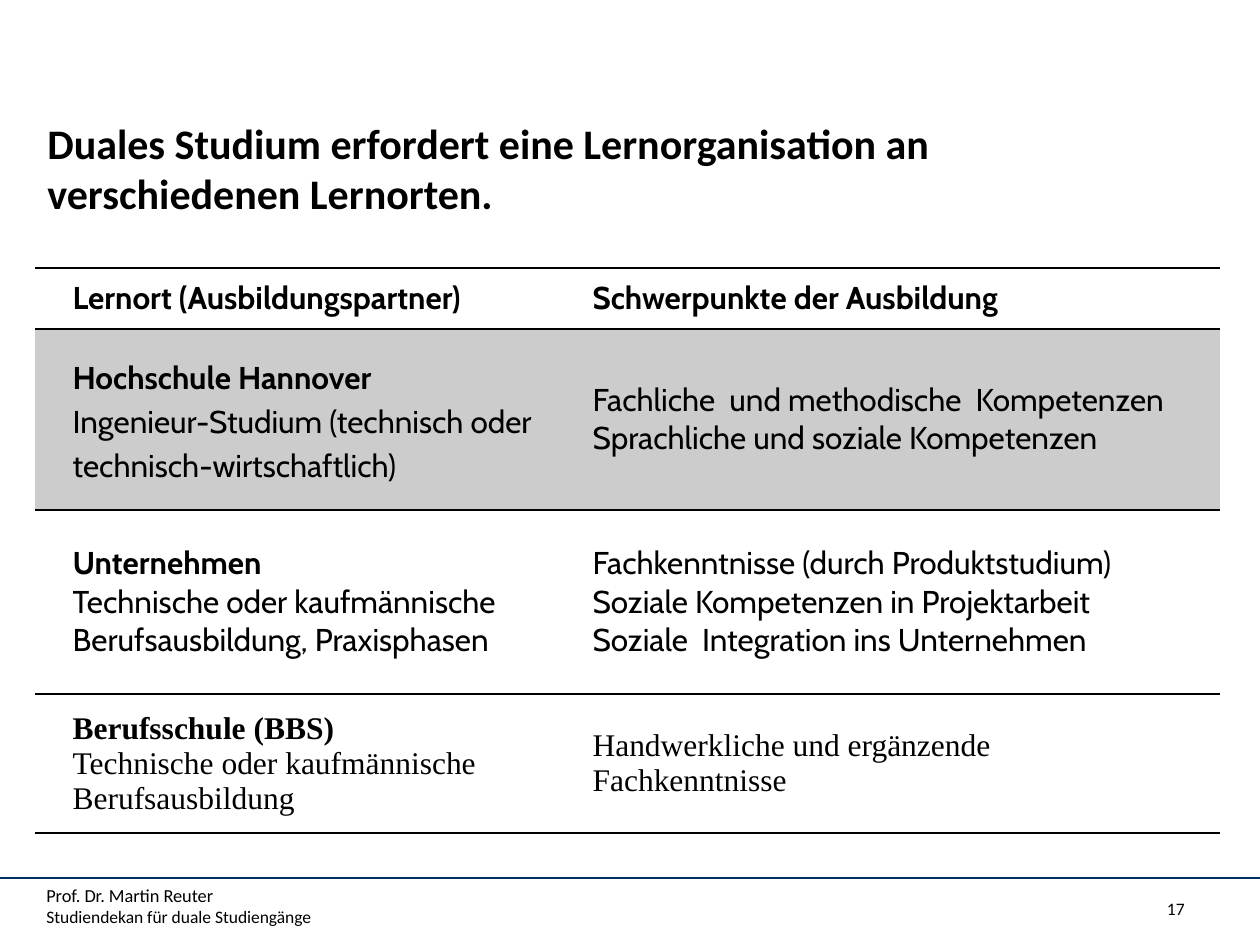
from lxml.etree import SubElement
from pptx import Presentation
from pptx.dml.color import RGBColor
from pptx.enum.shapes import MSO_CONNECTOR
from pptx.enum.text import MSO_ANCHOR, PP_ALIGN
from pptx.oxml import parse_xml
from pptx.oxml.ns import nsdecls, qn
from pptx.util import Pt

BLACK = RGBColor(0x00, 0x00, 0x00)
GREY = RGBColor(0xCC, 0xCC, 0xCC)
NAVY = RGBColor(0x00, 0x30, 0x5D)

# A cell is a list of paragraphs, a paragraph a list of (line, bold).
HEADER = [
    [[("Lernort (Ausbildungspartner)", True)]],
    [[("Schwerpunkte der Ausbildung", True)]],
]
UNIVERSITY = [
    [[("Hochschule Hannover", True)],
     [("Ingenieur-Studium (technisch oder technisch-wirtschaftlich)", False)]],
    [[("Fachliche  und methodische  Kompetenzen", False)],
     [("Sprachliche und soziale Kompetenzen", False)]],
]
COMPANY = [
    [[("Unternehmen", True),
      ("Technische oder kaufmännische Berufsausbildung, Praxisphasen", False)]],
    [[("Fachkenntnisse (durch Produktstudium)", False)],
     [("Soziale Kompetenzen in Projektarbeit", False)],
     [("Soziale  Integration ins Unternehmen", False)]],
]
SCHOOL = [
    [[("Berufsschule (BBS)", True)],
     [("Technische oder kaufmännische Berufsausbildung", False)]],
    [[("Handwerkliche und ergänzende", False), ("Fachkenntnisse", False)]],
]
# Each table: font and rows of (height, fill, cells)
TABLES = [
    ("Cabin", [(61, None, HEADER), (181, GREY, UNIVERSITY)]),
    ("Cabin", [(184, None, COMPANY)]),
    ("Times New Roman", [(139, None, SCHOOL)]),
]
TABLE_LEFT, TABLE_TOP = 35, 268
COLUMNS = [520, 665]
CELL_INDENT = 25

TEXTS = [
    dict(box=(35, 111, 1187, 115), align=PP_ALIGN.LEFT, bold=True,
         lines=[("Duales Studium erfordert eine Lernorganisation an", 24),
                ("verschiedenen Lernorten.", 24)]),
    dict(box=(34, 878, 843, 49), align=PP_ALIGN.LEFT, bold=False,
         lines=[("Prof. Dr. Martin Reuter", 10.5),
                ("Studiendekan für duale Studiengänge", 10)]),
    dict(box=(966, 892, 231, 32), align=PP_ALIGN.RIGHT, bold=False,
         lines=[("17", 10)]),
]


def px(length):
    return round(length * 914400 / 126)


def add_lines(paragraph, lines, font_name):
    """Write (text, size, bold) lines with line breaks between them."""
    for number, (text, size, bold) in enumerate(lines):
        if number:
            paragraph.add_line_break()
        run = paragraph.add_run()
        run.text = text
        run.font.color.rgb = BLACK
        for key, value in dict(name=font_name, size=Pt(size), bold=bold).items():
            setattr(run.font, key, value)


def set_borders(cell):
    """Rule the cell above and below, and leave its sides open."""
    for position, side in enumerate(("lnL", "lnR", "lnT", "lnB")):
        border = parse_xml(f'<a:{side} {nsdecls("a")} w="{Pt(1)}"/>')
        if side in ("lnT", "lnB"):
            solid = SubElement(border, qn("a:solidFill"))
            SubElement(solid, qn("a:srgbClr"), val=str(BLACK))
        else:
            SubElement(border, qn("a:noFill"))
        cell._tc.get_or_add_tcPr().insert(position, border)


def fill_cell(cell, paragraphs, fill, font_name):
    cell.vertical_anchor = MSO_ANCHOR.MIDDLE
    if fill is None:
        cell.fill.background()
    else:
        cell.fill.solid()
        cell.fill.fore_color.rgb = fill
    set_borders(cell)
    frame = cell.text_frame
    for number, lines in enumerate(paragraphs):
        paragraph = frame.add_paragraph() if number else frame.paragraphs[0]
        paragraph._p.get_or_add_pPr().set("marL", str(px(CELL_INDENT)))
        if paragraphs is UNIVERSITY[0]:
            paragraph.line_spacing = Pt(25)
        add_lines(paragraph, [(text, 18, bold) for text, bold in lines], font_name)


def add_learning_table(slide, top, font_name, rows):
    height = sum(row[0] for row in rows)
    table = slide.shapes.add_table(
        len(rows), len(COLUMNS), px(TABLE_LEFT), px(top),
        px(sum(COLUMNS)), px(height)).table
    table.first_row = table.horz_banding = False
    for column, width in zip(table.columns, COLUMNS):
        column.width = px(width)
    for row, (row_height, fill, cells) in zip(table.rows, rows):
        row.height = px(row_height)
        for cell, paragraphs in zip(row.cells, cells):
            fill_cell(cell, paragraphs, fill, font_name)
    return top + height


def add_text(slide, box, align, bold, lines):
    frame = slide.shapes.add_textbox(*map(px, box)).text_frame
    frame.word_wrap = True
    paragraph = frame.paragraphs[0]
    paragraph.alignment = align
    add_lines(paragraph, [(text, size, bold) for text, size in lines], "Calibri")


def add_footer_rule(slide):
    rule = slide.shapes.add_connector(
        MSO_CONNECTOR.STRAIGHT, 0, px(878), px(1260), px(878))
    rule.line.color.rgb = NAVY
    rule.line.width = Pt(0.75)
    SubElement(rule._element.spPr, qn("a:effectLst"))


def main():
    deck = Presentation()
    deck.slide_width, deck.slide_height = px(1260), px(945)
    slide = deck.slides.add_slide(deck.slide_layouts[6])
    add_footer_rule(slide)
    for text in TEXTS:
        add_text(slide, **text)
    top = TABLE_TOP
    for font_name, rows in TABLES:
        top = add_learning_table(slide, top, font_name, rows)
    deck.save("out.pptx")


if __name__ == "__main__":
    main()
